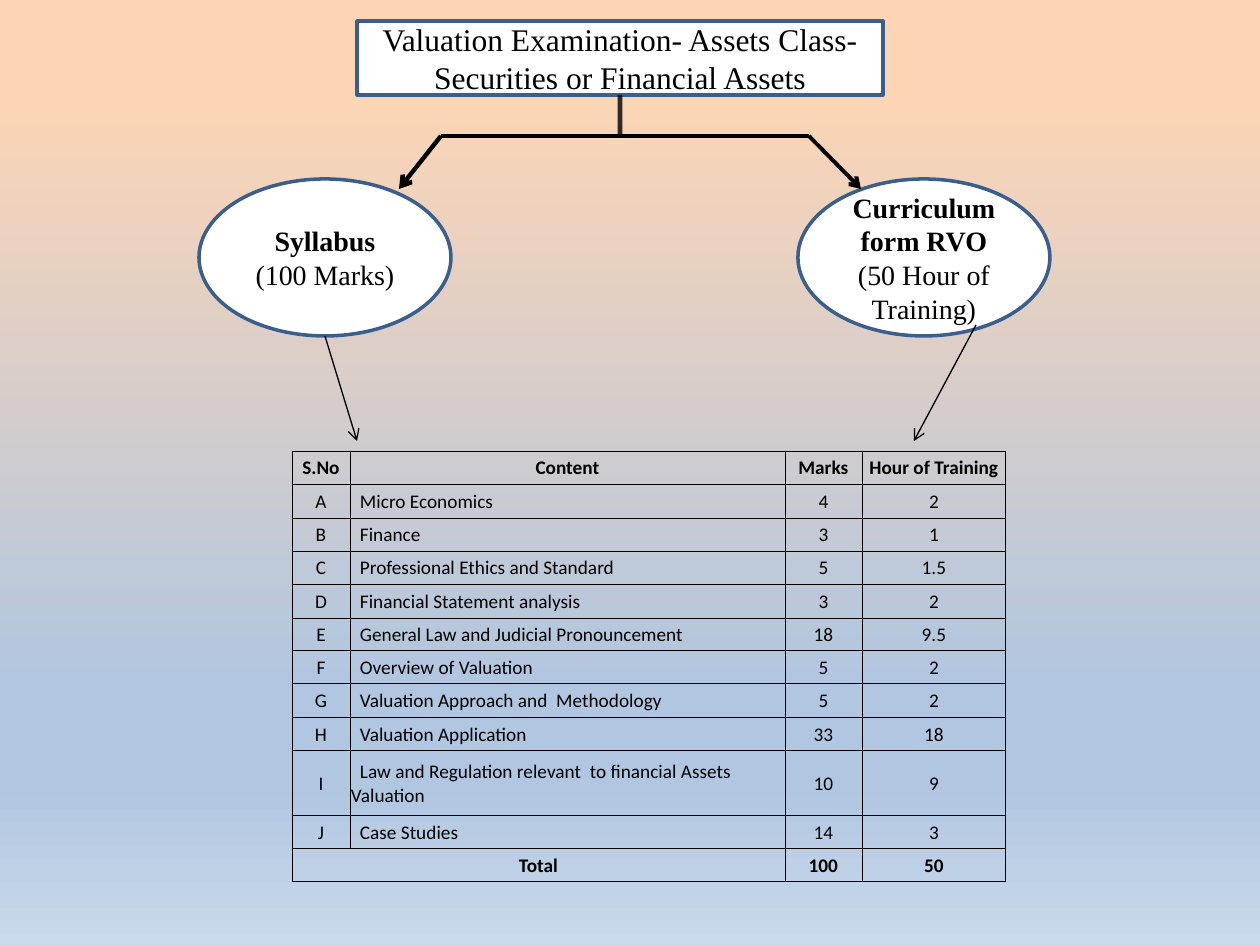
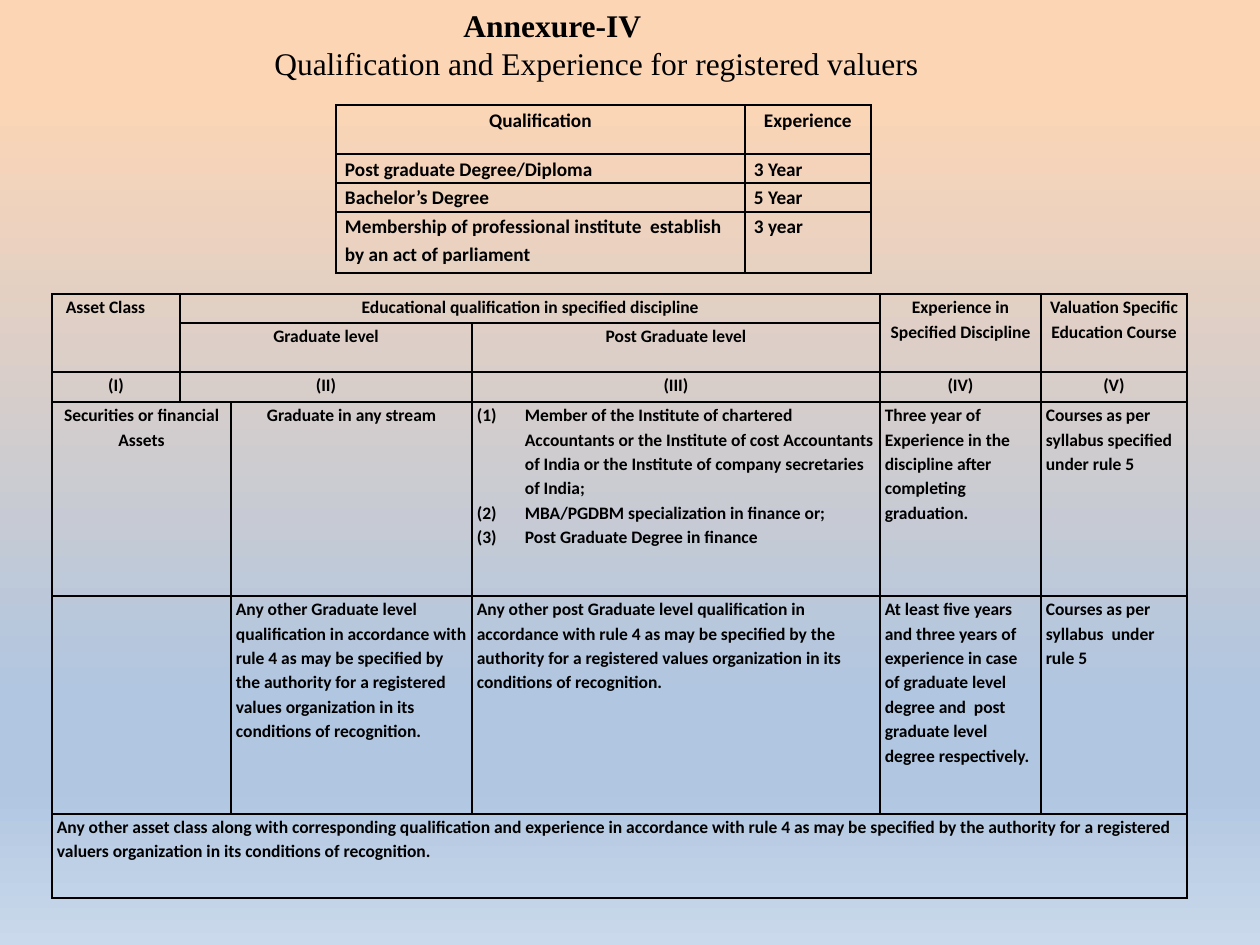
"""Build two slides on the valuation examination and the qualifications of valuers."""
from lxml import etree
from pptx import Presentation
from pptx.dml.color import RGBColor
from pptx.enum.shapes import MSO_CONNECTOR, MSO_SHAPE
from pptx.enum.text import MSO_ANCHOR, PP_ALIGN
from pptx.oxml import parse_xml
from pptx.oxml.ns import nsdecls, qn
from pptx.util import Inches, Pt

PX = 7257
LEFT, CENTER = PP_ALIGN.LEFT, PP_ALIGN.CENTER
TOP, MIDDLE = MSO_ANCHOR.TOP, MSO_ANCHOR.MIDDLE
RECTANGLE, OVAL = MSO_SHAPE.RECTANGLE, MSO_SHAPE.OVAL
STRAIGHT = MSO_CONNECTOR.STRAIGHT
BLACK, WHITE, OUTLINE = "000000", "FFFFFF", "3A5F8C"
SERIF, SANS = "Times New Roman", "Calibri"
BACKGROUND = f"""<p:bg {nsdecls('p', 'a')}><p:bgPr><a:gradFill rotWithShape="1"><a:gsLst>
<a:gs pos="10000"><a:srgbClr val="FCD5B5"><a:alpha val="87000"/></a:srgbClr></a:gs>
<a:gs pos="74000"><a:srgbClr val="B0C6E1"/></a:gs>
<a:gs pos="83000"><a:srgbClr val="B0C6E1"/></a:gs>
<a:gs pos="100000"><a:srgbClr val="CAD9EB"/></a:gs>
</a:gsLst><a:lin ang="5400000" scaled="0"/></a:gradFill><a:effectLst/></p:bgPr></p:bg>"""


def color(value):
    return RGBColor.from_string(value)


def write(frame, text, size=10, font=SANS, bold=False, align=LEFT, margin=0,
          indent=0, spacing=None, after=None, numbered=False):
    paragraph = frame.add_paragraph() if frame.text else frame.paragraphs[0]
    paragraph.alignment = align
    paragraph.line_spacing = spacing
    paragraph.space_after = None if after is None else Pt(after)
    properties = paragraph._p.get_or_add_pPr()
    properties.set("marL", str(margin * PX))
    properties.set("indent", str(indent * PX))
    if numbered:
        etree.SubElement(properties, qn("a:buAutoNum"), type="arabicParenBoth")
    if not text:
        paragraph._p.get_or_add_endParaRPr().set("sz", "800")
        return
    run = paragraph.add_run()
    run.text = text
    run.font.size = Pt(size)
    run.font.name = font
    run.font.bold = bold
    run.font.color.rgb = color(BLACK)


presentation = Presentation()
presentation.slide_width = Inches(10)
presentation.slide_height = Inches(7.5)
for _ in range(2):
    slide = presentation.slides.add_slide(presentation.slide_layouts[6])
    slide._element.cSld.insert(0, parse_xml(BACKGROUND))
exam_slide, annexure_slide = presentation.slides

boxes = []
for geometry, x, y, width, height, size, lines in (
    (RECTANGLE, 357, 21, 526, 74, 18,
     [("Valuation Examination- Assets Class- Securities or Financial Assets", False)]),
    (OVAL, 199, 179, 252, 157, 16, [("Syllabus", True), ("(100 Marks)", False)]),
    (OVAL, 798, 179, 252, 157, 16,
     [("Curriculum form RVO", True), ("(50 Hour of Training)", False)]),
):
    shape = exam_slide.shapes.add_shape(geometry, x * PX, y * PX, width * PX, height * PX)
    shape.shadow.inherit = False
    shape.fill.solid()
    shape.fill.fore_color.rgb = color(WHITE)
    shape.line.color.rgb = color(OUTLINE)
    shape.line.width = Pt(2)
    shape.text_frame.word_wrap = True
    shape.text_frame.vertical_anchor = MIDDLE
    for text, bold in lines:
        write(shape.text_frame, text, size=size, font=SERIF, bold=bold, align=CENTER)
    boxes.append(shape)

connectors = []
for x1, y1, x2, y2, weight, has_arrow in (
    (620, 95, 620, 136, 2.75, False),
    (441, 136, 809, 136, 2, False),
    (441, 136, 399, 189, 2.5, True),
    (809, 136, 861, 189, 2.25, True),
    (325, 336, 357, 441, 0.75, True),
    (976, 325, 914, 441, 0.75, True),
):
    connector = exam_slide.shapes.add_connector(STRAIGHT, x1 * PX, y1 * PX, x2 * PX, y2 * PX)
    connector.line.color.rgb = color(BLACK)
    connector.line.width = Pt(weight)
    if has_arrow:
        etree.SubElement(connector.line._get_or_add_ln(), qn("a:tailEnd"), type="arrow")
    etree.SubElement(connector._element.spPr, qn("a:effectLst"))
    connectors.append(connector)
stem = connectors[0]
stem.begin_connect(boxes[0], 2)
stem_color = stem._element.spPr.find(".//" + qn("a:srgbClr"))
etree.SubElement(stem_color, qn("a:alpha"), val="80000")

heading = annexure_slide.shapes.add_textbox(262 * PX, 0, 683 * PX, 89 * PX).text_frame
heading.word_wrap = True
write(heading, "Annexure-IV", size=18, font=SERIF, bold=True, margin=189)
write(heading, "Qualification and Experience for registered valuers", size=18, font=SERIF)

syllabus_rows = [
    ["S.No", "Content", "Marks", "Hour of Training"],
    ["A", "Micro Economics", "4", "2"],
    ["B", "Finance", "3", "1"],
    ["C", "Professional Ethics and Standard", "5", "1.5"],
    ["D", "Financial Statement analysis", "3", "2"],
    ["E", "General Law and Judicial Pronouncement", "18", "9.5"],
    ["F", "Overview of Valuation", "5", "2"],
    ["G", "Valuation Approach and  Methodology", "5", "2"],
    ["H", "Valuation Application", "33", "18"],
    ["I", "Law and Regulation relevant  to financial Assets Valuation", "10", "9"],
    ["J", "Case Studies", "14", "3"],
    ["Total", "", "100", "50"],
]
experience_rows = [
    ["Qualification", "Experience"],
    ["Post graduate Degree/Diploma", "3 Year"],
    ["Bachelor’s Degree", "5 Year"],
    ["Membership of professional institute  establish by an act of parliament", "3 year"],
]
discipline_rows = [
    ["Asset Class", "Educational qualification in specified discipline", "", "",
     "Experience in Specified Discipline", "Valuation Specific Education Course"],
    ["", "Graduate level", "", "Post Graduate level", "", ""],
    ["(I)", "(II)", "", "(III)", "(IV)", "(V)"],
    ["Securities or financial Assets", "", "Graduate in any stream",
     ["Member of the Institute of chartered Accountants or the Institute of cost Accountants "
      "of India or the Institute of company secretaries of India;",
      "MBA/PGDBM specialization in finance or;",
      "Post Graduate Degree in finance"],
     "Three year of Experience in the discipline after completing graduation.",
     "Courses as per syllabus specified under rule 5"],
    ["", "",
     "Any other Graduate level qualification in accordance with rule 4 as may be specified by "
     "the authority for a registered values organization in its conditions of recognition.",
     "Any other post Graduate level qualification in accordance with rule 4 as may be specified "
     "by the authority for a registered values organization in its conditions of recognition.",
     "At least five years and three years of experience in case of graduate level degree and  "
     "post graduate level degree respectively.",
     "Courses as per syllabus  under rule 5"],
    ["Any other asset class along with corresponding qualification and experience in accordance "
     "with rule 4 as may be specified by the authority for a registered valuers organization "
     "in its conditions of recognition.", "", "", "", "", ""],
    [""] * 6,
]

syllabus_styles = {(row, column): {"bold": row in (0, 11), "align": CENTER}
                   for row in range(12) for column in range(4)}
for row in range(1, 11):
    syllabus_styles[row, 1] = {"indent": 9}
experience_styles = {(0, column): {"align": CENTER} for column in range(2)}
discipline_styles = {(row, column): {"align": CENTER}
                     for row in range(3) for column in range(6)}
discipline_styles |= {
    (0, 0): {"margin": 9, "after": 10},
    (3, 0): {"align": CENTER},
    (3, 2): {"align": CENTER},
    (3, 3): {"margin": 48, "indent": -48, "numbered": True},
}
bold_spaced = {"bold": True, "spacing": 1.15}

for slide, x, y, widths, heights, rows, base, styles, merges, insets, anchor, border, open_sides in (
    (exam_slide, 292, 451, [58, 435, 77, 144], [33, 34, 33] * 3 + [65, 33, 33],
     syllabus_rows, {"size": 11}, syllabus_styles, [(11, 0, 11, 1)],
     (1, 1, 1, 0), MIDDLE, 0.5, ()),
    (annexure_slide, 336, 105, [409, 126], [49, 29, 29, 61],
     experience_rows, {"size": 11, **bold_spaced}, experience_styles, [],
     (9, 0, 9, 0), TOP, 1, ()),
    (annexure_slide, 52, 294, [128, 51, 241, 408, 161, 146], [29, 49, 30, 194, 218, 62, 22],
     discipline_rows, {"size": 10, **bold_spaced}, discipline_styles,
     [(0, 0, 1, 0), (0, 1, 0, 3), (0, 4, 1, 4), (0, 5, 1, 5), (1, 1, 1, 2), (2, 1, 2, 2),
      (3, 0, 3, 1), (4, 0, 4, 1), (5, 0, 5, 5), (6, 0, 6, 5)],
     (5, 0, 5, 0), TOP, 1, ((5, "B"), (6, "T"))),
):
    table = slide.shapes.add_table(len(heights), len(widths), x * PX, y * PX,
                                   sum(widths) * PX, sum(heights) * PX).table
    table.first_row = table.horz_banding = False
    for column, width in zip(table.columns, widths):
        column.width = width * PX
    for table_row, height in zip(table.rows, heights):
        table_row.height = height * PX
    for row, texts in enumerate(rows):
        for column, content in enumerate(texts):
            cell = table.cell(row, column)
            cell.margin_left, cell.margin_top, cell.margin_right, cell.margin_bottom = [
                inset * PX for inset in insets]
            cell.vertical_anchor = anchor
            for side in "LRTB":
                line = etree.SubElement(cell._tc.get_or_add_tcPr(), qn("a:ln" + side),
                                        w=str(Pt(border)))
                if (row, side) in open_sides:
                    etree.SubElement(line, qn("a:noFill"))
                else:
                    fill = etree.SubElement(line, qn("a:solidFill"))
                    etree.SubElement(fill, qn("a:srgbClr"), val=BLACK)
            cell.fill.background()
            for text in content if isinstance(content, list) else [content]:
                write(cell.text_frame, text, **{**base, **styles.get((row, column), {})})
    for top, left, bottom, right in merges:
        table.cell(top, left).merge(table.cell(bottom, right))

presentation.save("out.pptx")
